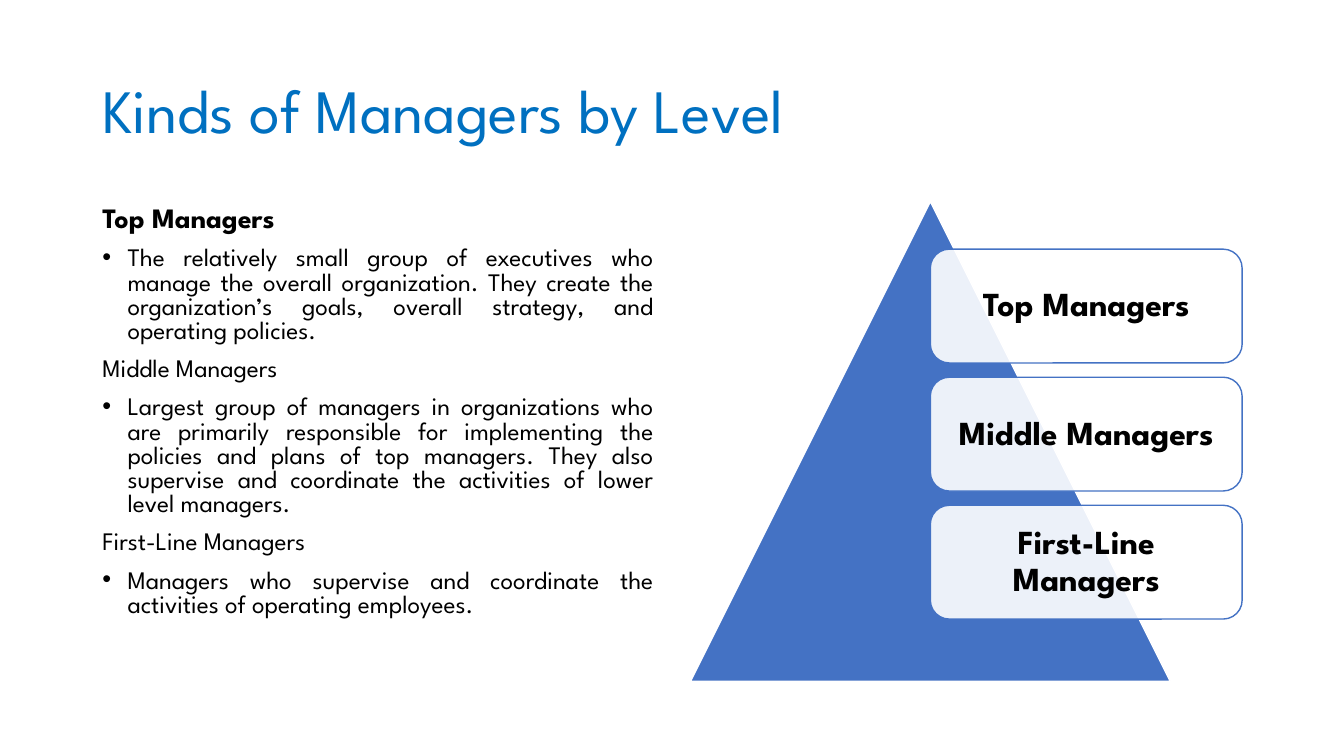
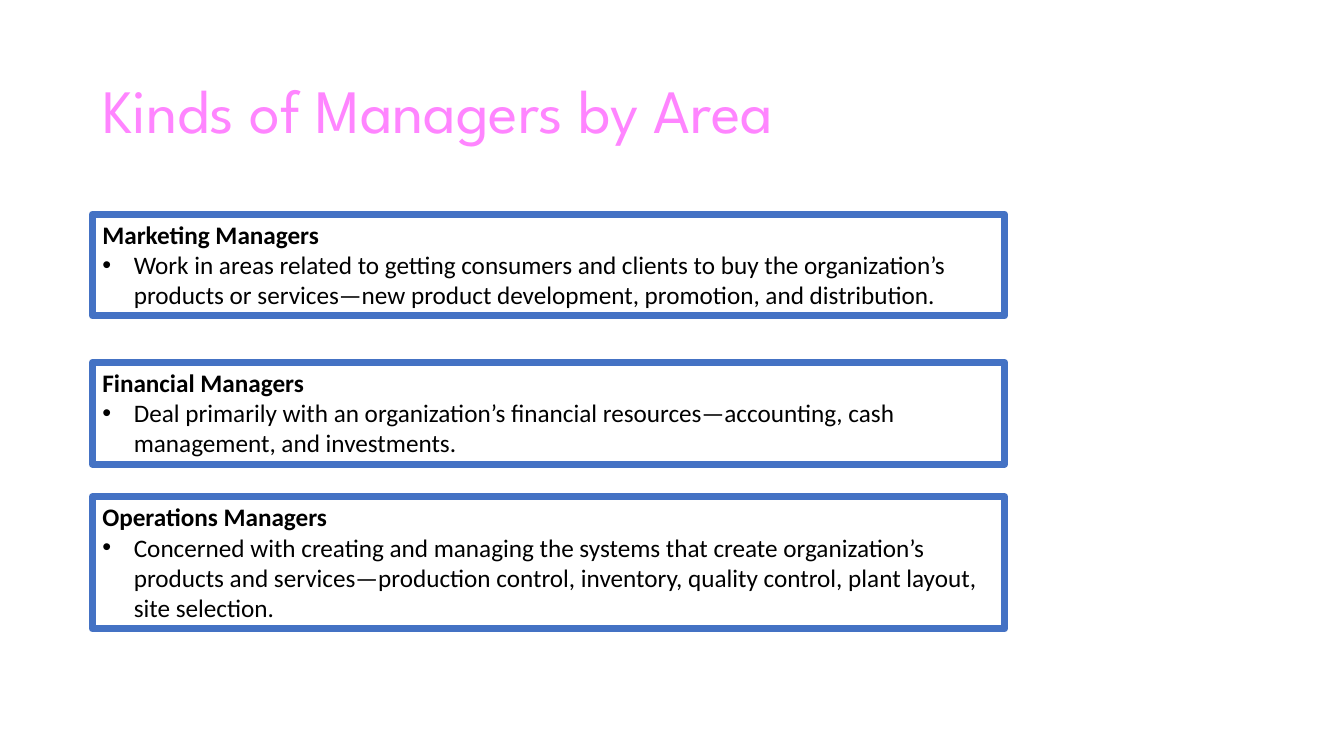
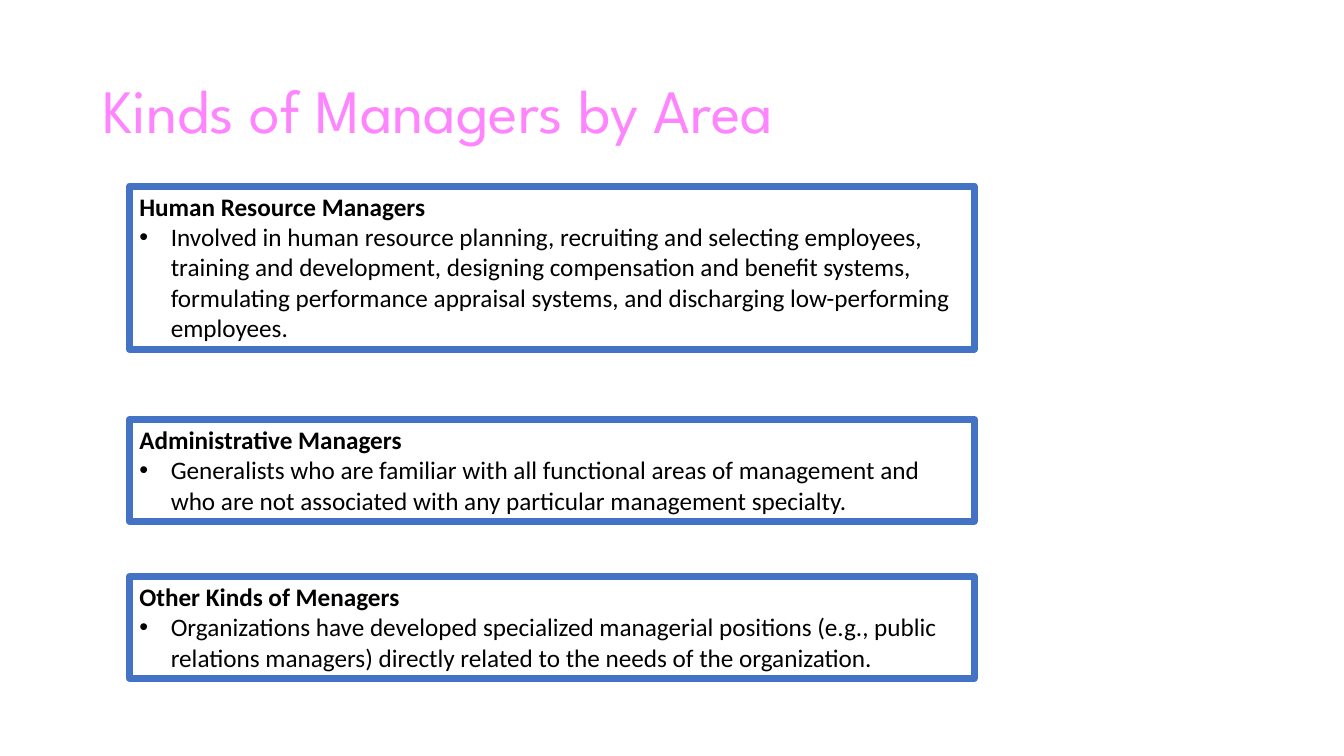
from lxml import etree
from pptx import Presentation
from pptx.dml.color import RGBColor
from pptx.enum import shapes, text
from pptx.oxml.ns import qn
from pptx.util import Pt

BLUE = RGBColor(0x44, 0x72, 0xC4)
SKY = RGBColor(0x00, 0x70, 0xC0)
PINK = RGBColor(0xFF, 0x85, 0xFF)
BLACK = RGBColor(0, 0, 0)
WHITE = RGBColor(255, 255, 255)
HEAD, BODY = "League Spartan", "Calibri"
LEFT, TOP = 66, 144
KIND = shapes.MSO_SHAPE
ALIGN = text.PP_ALIGN
ANCHOR = text.MSO_ANCHOR

LEVELS = [
    ("Top Managers",
     "The relatively small group of executives who manage the overall organization. "
     "They create the organization’s goals, overall strategy, and operating policies."),
    ("Middle Managers",
     "Largest group of managers in organizations who are primarily responsible for "
     "implementing the policies and plans of top managers. They also supervise and "
     "coordinate the activities of lower level managers."),
    ("First-Line Managers",
     "Managers who supervise and coordinate the activities of operating employees."),
]

# Each area slide: left, width, then (top, height, heading, duty) per box
AREAS = [
    (LEFT, 651.6, [
        (152.9, 72.7, "Marketing Managers",
         "Work in areas related to getting consumers and clients to buy the organization’s "
         "products or services—new product development, promotion, and distribution."),
        (258.8, 72.7, "Financial Managers",
         "Deal primarily with an organization’s financial resources—accounting, cash "
         "management, and investments."),
        (354.8, 94.5, "Operations Managers",
         "Concerned with creating and managing the systems that create organization’s "
         "products and services—production control, inventory, quality control, plant "
         "layout, site selection."),
    ]),
    (92.4, 603.4, [
        (133, 116.4, "Human Resource Managers",
         "Involved in human resource planning, recruiting and selecting employees, training "
         "and development, designing compensation and benefit systems, formulating "
         "performance appraisal systems, and discharging low-performing employees."),
        (299.6, 72.7, "Administrative Managers",
         "Generalists who are familiar with all functional areas of management and who are "
         "not associated with any particular management specialty."),
        (411.8, 72.7, "Other Kinds of Menagers",
         "Organizations have developed specialized managerial positions (e.g., public "
         "relations managers) directly related to the needs of the organization."),
    ]),
]


def write(frame, words, size=18, font=HEAD, color=BLACK, bold=False, align=ALIGN.LEFT,
          lead=None, before=0, bullet=0):
    """Add one paragraph; bullet is its hanging indent in points."""
    para = frame.paragraphs[0]
    if para.runs:
        para = frame.add_paragraph()
    para.alignment = align
    para.space_before = Pt(before)
    if lead:
        para.line_spacing = lead
    if bullet:
        props = para._p.get_or_add_pPr()
        props.set("marL", str(Pt(bullet)))
        props.set("indent", str(-Pt(bullet)))
        etree.SubElement(props, qn("a:buFont")).set("typeface", "Arial")
        etree.SubElement(props, qn("a:buChar")).set("char", "•")
    run = para.add_run()
    run.text = words
    run.font.size, run.font.name, run.font.bold = Pt(size), font, bold
    run.font.color.rgb = color


def set_frame(shape, anchor):
    frame = shape.text_frame
    frame.word_wrap = True
    frame.vertical_anchor = anchor
    return frame


def add_box(slide, area, anchor=ANCHOR.TOP):
    return set_frame(slide.shapes.add_textbox(*map(Pt, area)), anchor)


def add_form(slide, kind, area, line, width=1, fill=None, alpha=None):
    form = slide.shapes.add_shape(kind, *map(Pt, area))
    form.shadow.inherit = False
    form.line.color.rgb, form.line.width = line, Pt(width)
    if fill is None:
        form.fill.background()
    else:
        form.fill.solid()
        form.fill.fore_color.rgb = fill
    if alpha:
        tint = form._element.spPr.find(qn("a:solidFill"))[0]
        etree.SubElement(tint, qn("a:alpha")).set("val", str(alpha * 1000))
    return form


def add_slide(deck, title, color):
    slide = deck.slides.add_slide(deck.slide_layouts[6])
    frame = add_box(slide, (LEFT, 28.8, 828, 104.4), ANCHOR.MIDDLE)
    write(frame, title, size=44, color=color, lead=0.9)
    return slide


def add_levels(deck):
    slide = add_slide(deck, "Kinds of Managers by Level", SKY)
    frame = add_box(slide, (LEFT, TOP, 408, 342.7))
    for i, (name, duty) in enumerate(LEVELS):
        first = i == 0
        write(frame, name, size=20 if first else 18, bold=first, lead=0.8, before=10)
        write(frame, duty, align=ALIGN.JUSTIFY, lead=0.8, before=10, bullet=18)

    side, left = 342.7, 493.2
    add_form(slide, KIND.ISOSCELES_TRIANGLE, (left, TOP, side, side), WHITE, fill=BLUE)
    high = 81.3
    step = high * 9 / 8
    for i, (name, _) in enumerate(LEVELS):
        area = (left + side / 2, 178 + i * step, side * 0.65, high)
        card = add_form(slide, KIND.ROUNDED_RECTANGLE, area, BLUE, fill=WHITE, alpha=90)
        frame = set_frame(card, ANCHOR.MIDDLE)
        write(frame, name, size=24, bold=True, align=ALIGN.CENTER, lead=0.9)


def add_areas(deck, left, width, boxes):
    slide = add_slide(deck, "Kinds of Managers by Area", PINK)
    for top, high, name, duty in boxes:
        box = add_form(slide, KIND.RECTANGLE, (left, top, width, high), BLUE, width=5)
        frame = set_frame(box, ANCHOR.TOP)
        write(frame, name, font=BODY, bold=True)
        write(frame, duty, font=BODY, bullet=22.5)


def main():
    deck = Presentation()
    deck.slide_width, deck.slide_height = Pt(960), Pt(540)
    add_levels(deck)
    for area in AREAS:
        add_areas(deck, *area)
    deck.save("out.pptx")


if __name__ == "__main__":
    main()
